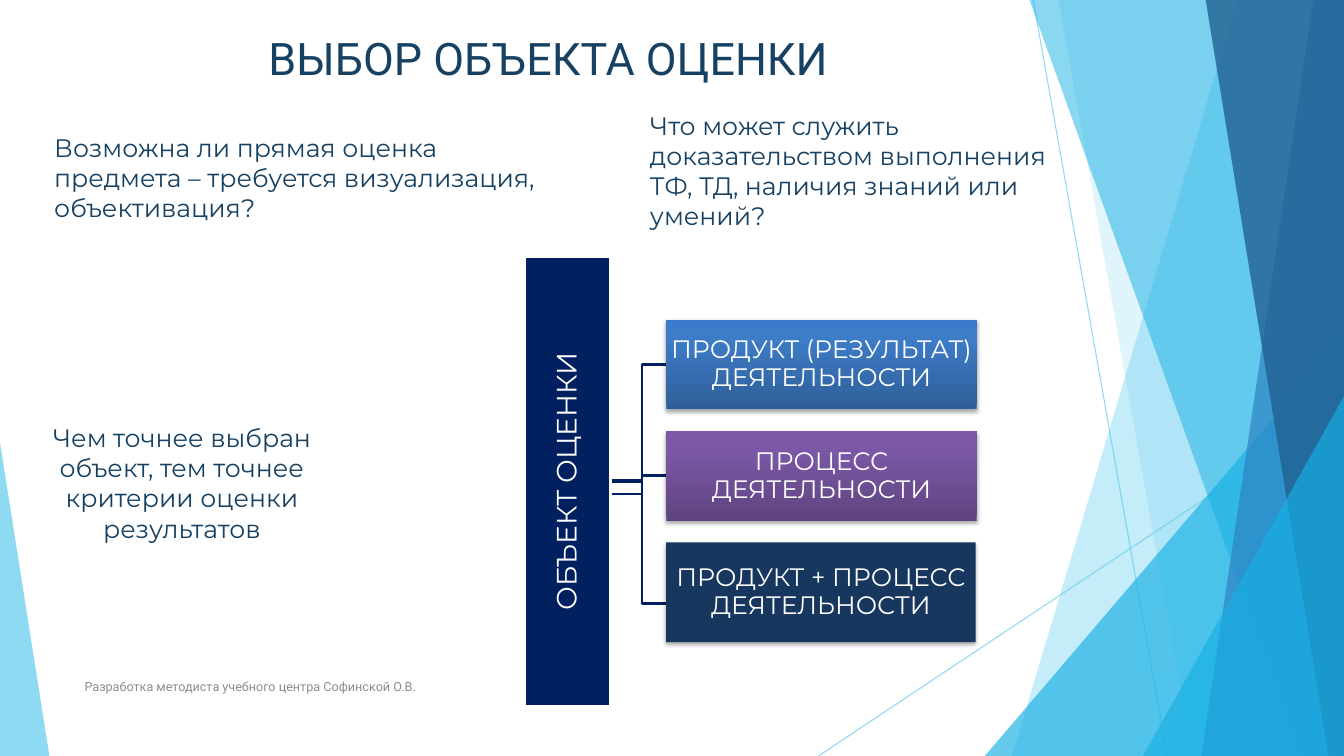
import copy
from lxml import etree
from pptx import Presentation, util as u
from pptx.dml import color
from pptx.enum import shapes, text
from pptx.oxml import ns

COLORS = {
    "ink": "174162", "grey": "8C8C8C", "white": "FFFFFF", "navy": "002060",
    "sky": "5FCBEF", "azure": "17B0E4", "blue": "2E83C3", "deep": "226292",
    "dusk": "17375E", "black": "000000",
}
WIDTH, HEIGHT, TOP = 960, 540, -0.72
TITLE = "ВЫБОР ОБЪЕКТА ОЦЕНКИ"
TITLE_FRAME = (53.28, 18, 676.8, 59.76)

RAYS = [((738, 0), (833.76, 540)), ((960, 290.16), (584.64, 540))]
WEDGES = [
    ("band", (884.16, 722.88), "sky", 36),
    ("band", (756, 851.76), "sky", 20),
    ("corner", (703.44, 239.76), "azure", 66),
    ("band", (735.12, 929.52), "azure", 50),
    ("band", (938.16, 858.24), "blue", 70),
    ("band", (861.12, 948.96), "deep", 80),
    ("corner", (816.48, 282.96), "azure", 66),
]
LEFT_WEDGE = (0, 316.08, 35.28, 223.92)

NOTES = [
    ("Возможна ли прямая оценка предмета – требуется визуализация, объективация?",
     (31.68, 90.72, 374.4, 72.72), 18, "Montserrat", "ink", "LEFT", "TOP"),
    ("Что может служить доказательством выполнения ТФ, ТД, наличия знаний или умений?",
     (457.2, 74.88, 323.28, 94.32), 18, "Montserrat", "ink", "LEFT", "TOP"),
    ("Чем точнее выбран объект, тем точнее критерии оценки результатов",
     (25.2, 298.08, 209.52, 115.92), 18, "Montserrat", "ink", "CENTER", "TOP"),
    ("Разработка методиста учебного центра Софинской О.В.",
     (53.28, 475.92, 496.08, 28.8), 9, "Roboto", "grey", "LEFT", "MIDDLE"),
]

ROOT = ("ОБЪЕКТ ОЦЕНКИ", (244.8, 313.2, 321.12, 61.2))
BRANCHES = [
    ("ПРОДУКТ (РЕЗУЛЬТАТ) ДЕЯТЕЛЬНОСТИ", (475.92, 228.24, 221.76, 64.08),
     [(0, "2F5F99"), (0.8, "3D7CC7"), (1, "3A7CCB")]),
    ("ПРОЦЕСС ДЕЯТЕЛЬНОСТИ", (475.92, 308.16, 221.76, 64.08),
     [(0, "5F4480"), (0.8, "7B58A6"), (1, "7C57A8")]),
    ("ПРОДУКТ + ПРОЦЕСС ДЕЯТЕЛЬНОСТИ", (475.92, 387.36, 221.04, 71.28), None),
]
BRACKET_X = (436.32, 458.64, 480.96)
BRACKET_Y = [(343.44, 431.28), (344.16, 339.84), (352.8, 260.64)]


def rgb(name):
    return color.RGBColor.from_string(COLORS.get(name, name))


def points(values):
    return [u.Pt(value) for value in values]


def set_alpha(shape, percent):
    for tint in shape._element.spPr.iter(ns.qn("a:srgbClr")):
        etree.SubElement(tint, ns.qn("a:alpha"), val=str(percent * 1000))


def paint(shape, fill=None, line=None, weight=2):
    shape.shadow.inherit = False
    if fill:
        shape.fill.solid()
        shape.fill.fore_color.rgb = rgb(fill)
    else:
        shape.fill.background()
    if line:
        shape.line.color.rgb = rgb(line)
        shape.line.width = u.Pt(weight)
    else:
        shape.line.fill.background()


def paint_gradient(shape, stops):
    shape.fill.gradient()
    shape.fill.gradient_angle = 90
    stop_list = shape._element.spPr.find(".//" + ns.qn("a:gsLst"))
    stop_list.append(copy.deepcopy(stop_list[-1]))
    for stop, (position, tint) in zip(shape.fill.gradient_stops, stops):
        stop.position = position
        stop.color.rgb = rgb(tint)


def add_shadow(shape):
    effects = shape._element.spPr.find(ns.qn("a:effectLst"))
    shadow = etree.SubElement(
        effects, ns.qn("a:outerShdw"), blurRad=str(u.Pt(3.1)), dist=str(u.Pt(1.8)),
        dir="5400000", rotWithShape="0")
    tint = etree.SubElement(shadow, ns.qn("a:srgbClr"), val=COLORS["black"])
    etree.SubElement(tint, ns.qn("a:alpha"), val="35000")


def write(box, words, size, font, ink, align, anchor, inset=None, spacing=None):
    frame = box.text_frame
    frame.word_wrap = True
    frame.auto_size = text.MSO_AUTO_SIZE.NONE
    frame.vertical_anchor = text.MSO_ANCHOR[anchor]
    if inset is not None:
        frame.margin_left = frame.margin_right = u.Pt(inset)
        frame.margin_top = frame.margin_bottom = u.Pt(inset)
    para = frame.paragraphs[0]
    para.alignment = text.PP_ALIGN[align]
    if spacing:
        para.line_spacing = spacing
    span = para.add_run()
    span.text = words
    span.font.size = u.Pt(size)
    span.font.name = font
    span.font.color.rgb = rgb(ink)


def add_path(page, corners, close):
    first, *rest = [points(corner) for corner in corners]
    builder = page.shapes.build_freeform(*first)
    builder.add_line_segments(rest, close=close)
    return builder.convert_to_shape()


def add_triangle(page, frame, apex, tint, alpha):
    triangle = page.shapes.add_shape(
        shapes.MSO_SHAPE.ISOSCELES_TRIANGLE, *points(frame))
    triangle.adjustments[0] = apex
    paint(triangle, tint)
    set_alpha(triangle, alpha)


def add_backdrop(page):
    for start, end in RAYS:
        ray = page.shapes.add_connector(
            shapes.MSO_CONNECTOR.STRAIGHT, *points(start + end))
        ray.line.color.rgb = rgb("sky")
        ray.line.width = u.Pt(0.75)
        set_alpha(ray, 70)
        etree.SubElement(ray._element.spPr, ns.qn("a:effectLst"))
    for kind, (first, second), tint, alpha in WEDGES:
        if kind == "corner":
            frame = (first, second, WIDTH - first, HEIGHT - second)
            add_triangle(page, frame, 1, tint, alpha)
        else:
            corners = [(first, TOP), (WIDTH, TOP), (WIDTH, HEIGHT), (second, HEIGHT)]
            band = add_path(page, corners, True)
            paint(band, tint)
            set_alpha(band, alpha)
    add_triangle(page, LEFT_WEDGE, 0, "sky", 70)


def add_box(page, words, frame, size, fill, line=None):
    box = page.shapes.add_shape(shapes.MSO_SHAPE.RECTANGLE, *points(frame))
    paint(box, fill, line)
    write(box, words, size, "Montserrat", "white", "CENTER", "MIDDLE", 0.72, 0.9)
    return box


def add_diagram(page):
    start, middle, end = BRACKET_X
    for source, target in BRACKET_Y:
        corners = [(start, source), (middle, source), (middle, target), (end, target)]
        paint(add_path(page, corners, False), line="navy")
    add_box(page, *ROOT, 20, "navy", "white").rotation = 270
    for words, frame, stops in BRANCHES:
        branch = add_box(page, words, frame, 18, "dusk")
        if stops:
            paint_gradient(branch, stops)
        add_shadow(branch)


def main():
    deck = Presentation()
    deck.slide_width, deck.slide_height = points((WIDTH, HEIGHT))
    page = deck.slides.add_slide(deck.slide_layouts.get_by_name("Title Only"))
    title = page.shapes.title
    title.left, title.top, title.width, title.height = points(TITLE_FRAME)
    write(title, TITLE, 32, "Roboto", "ink", "CENTER", "TOP")
    add_backdrop(page)
    for words, frame, *style in NOTES:
        write(page.shapes.add_textbox(*points(frame)), words, *style)
    add_diagram(page)
    deck.save("out.pptx")


if __name__ == "__main__":
    main()
